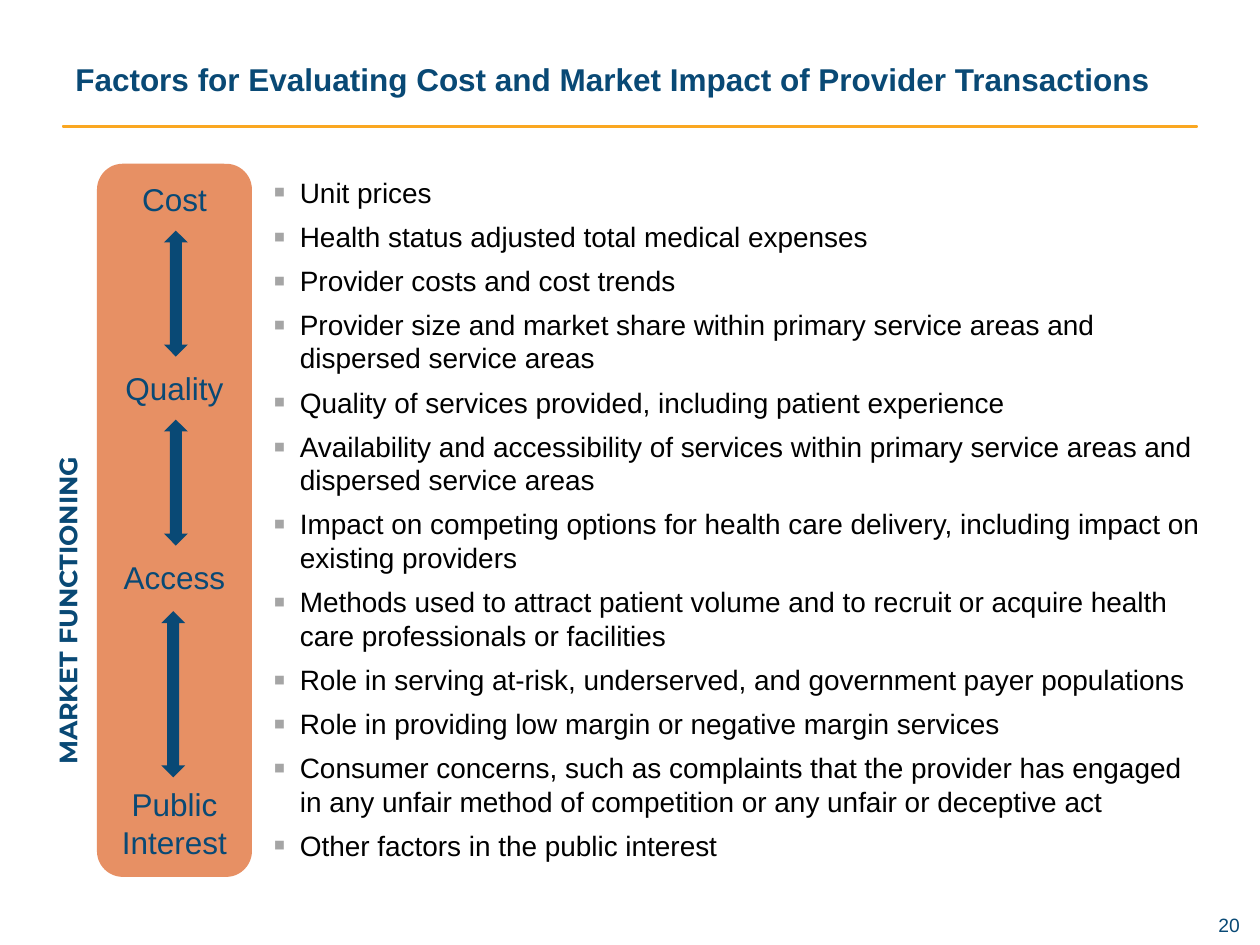
from lxml import etree
from pptx import Presentation
from pptx.dml.color import RGBColor
from pptx.enum.shapes import MSO_SHAPE
from pptx.enum.text import MSO_ANCHOR, PP_ALIGN
from pptx.oxml.ns import qn
from pptx.util import Inches, Pt

RECTANGLE = MSO_SHAPE.RECTANGLE
ROUNDED = MSO_SHAPE.ROUNDED_RECTANGLE
DOUBLE_ARROW = MSO_SHAPE.UP_DOWN_ARROW
MIDDLE = MSO_ANCHOR.MIDDLE
CENTER, RIGHT = PP_ALIGN.CENTER, PP_ALIGN.RIGHT

NAVY = RGBColor(0x09, 0x49, 0x75)
GOLD = RGBColor(0xFA, 0xA7, 0x21)
ORANGE = RGBColor(0xD9, 0x4C, 0x05)
BLACK = RGBColor(0x00, 0x00, 0x00)

presentation = Presentation()
presentation.slide_width = Inches(10)
presentation.slide_height = Inches(7.5)
slide = presentation.slides.add_slide(presentation.slide_layouts[6])


def add_filled_shape(kind, left, top, width, height, color):
    shape = slide.shapes.add_shape(
        kind, Inches(left), Inches(top), Inches(width), Inches(height))
    shape.shadow.inherit = False
    shape.fill.solid()
    shape.fill.fore_color.rgb = color
    shape.line.fill.background()
    return shape


def add_text_run(paragraph, text, size, color=NAVY, font_name="Arial", bold=False):
    run = paragraph.add_run()
    run.text = text
    run.font.size = Pt(size)
    run.font.name = font_name
    run.font.color.rgb = color
    run.font.bold = bold
    return run


# Rule under the title
rule = add_filled_shape(RECTANGLE, 0.5, 1, 9, 0.01, GOLD)
rule.line.color.rgb = GOLD
rule.line.width = Pt(1)

# Title
title = slide.shapes.add_textbox(Inches(0.5), Inches(0.25), Inches(9), Inches(0.75))
title.text_frame.word_wrap = True
title.text_frame.vertical_anchor = MIDDLE
add_text_run(title.text_frame.paragraphs[0],
             "Factors for Evaluating Cost and Market Impact of Provider Transactions",
             18, bold=True)

# Column of themes, spaced so that the arrows fit between them
column = add_filled_shape(ROUNDED, 0.77, 1.3, 1.23, 5.66, ORANGE)
column_color = column.fill._xPr.find(qn("a:solidFill"))[0]
etree.SubElement(column_color, qn("a:alpha")).set("val", "62000")
column_frame = column.text_frame
column_frame.word_wrap = True
column_frame.vertical_anchor = MIDDLE
themes = [("Cost", 0), ("Quality", 86.4), ("Access", 86.4), ("Public Interest", 108)]
for index, (theme, space_before) in enumerate(themes):
    paragraph = column_frame.add_paragraph() if index else column_frame.paragraphs[0]
    paragraph.alignment = CENTER
    paragraph.space_before = Pt(space_before)
    add_text_run(paragraph, theme, 18)

# Arrows between the themes
for left, top, height in [(1.3, 1.83, 1), (1.3, 3.33, 1), (1.28, 4.85, 1.32)]:
    add_filled_shape(DOUBLE_ARROW, left, top, 0.19, height, NAVY)

# Bulleted factors
factors = [
    "Unit prices",
    "Health status adjusted total medical expenses",
    "Provider costs and cost trends",
    "Provider size and market share within primary service areas and dispersed service areas",
    "Quality of services provided, including patient experience",
    "Availability and accessibility of services within primary service areas and "
    "dispersed service areas",
    "Impact on competing options for health care delivery, including impact on "
    "existing providers",
    "Methods used to attract patient volume and to recruit or acquire health care "
    "professionals or facilities",
    "Role in serving at-risk, underserved, and government payer populations",
    "Role in providing low margin or negative margin services",
    "Consumer concerns, such as complaints that the provider has engaged in any "
    "unfair method of competition or any unfair or deceptive act",
    "Other factors in the public interest",
]
factor_box = slide.shapes.add_textbox(
    Inches(2.17), Inches(1.39), Inches(7.42), Inches(5.86))
factor_frame = factor_box.text_frame
factor_frame.word_wrap = True
factor_frame.margin_left = factor_frame.margin_right = 0
factor_frame.margin_top = factor_frame.margin_bottom = 0
for index, factor in enumerate(factors):
    paragraph = factor_frame.add_paragraph() if index else factor_frame.paragraphs[0]
    properties = paragraph._p.get_or_add_pPr()
    properties.set("marL", str(Inches(0.21)))
    properties.set("indent", str(-Inches(0.21)))
    bullet_color = etree.SubElement(properties, qn("a:buClr"))
    etree.SubElement(bullet_color, qn("a:srgbClr")).set("val", "A5A5A5")
    etree.SubElement(properties, qn("a:buSzPct")).set("val", "125000")
    etree.SubElement(properties, qn("a:buFont")).set("typeface", "Arial")
    etree.SubElement(properties, qn("a:buChar")).set("char", "▪")
    paragraph.space_before = Pt(3 if index else 0)
    paragraph.space_after = Pt(3)
    add_text_run(paragraph, factor, 16, BLACK)

# Vertical side label in small capitals
side_label = slide.shapes.add_textbox(Inches(0.11), Inches(2.17), Inches(0.81), Inches(4))
side_label.text_frame.word_wrap = True
side_label.text_frame.vertical_anchor = MIDDLE
side_label.text_frame._txBody.bodyPr.set("vert", "vert270")
label_run = add_text_run(side_label.text_frame.paragraphs[0], "market functioning",
                         18, font_name="Montserrat", bold=True)
label_run.font._element.set("cap", "small")

# Page number
page_number = slide.shapes.add_textbox(
    Inches(7.42), Inches(7.25), Inches(2.42), Inches(0.19))
number_frame = page_number.text_frame
number_frame.word_wrap = True
number_frame.margin_left = number_frame.margin_right = 0
number_frame.margin_top = number_frame.margin_bottom = 0
number_frame.paragraphs[0].alignment = RIGHT
add_text_run(number_frame.paragraphs[0], "20", 11)

presentation.save("out.pptx")
